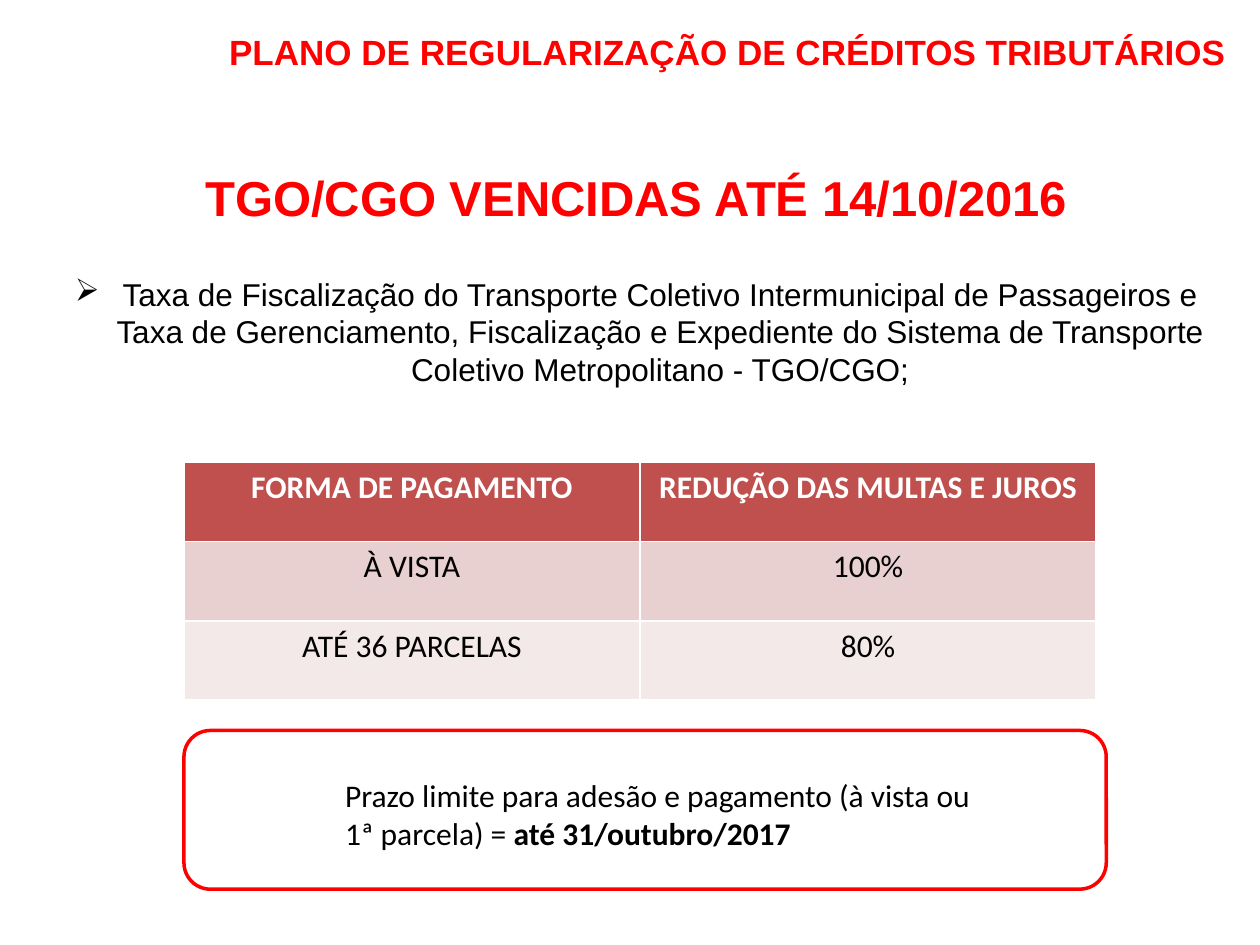
"""Build the slide on the tax credit regularisation plan for TGO/CGO fees."""
import pptx
import pptx.util
import pptx.dml.color
import pptx.enum.shapes
import pptx.enum.text
import pptx.oxml.ns
import lxml.etree

Pt = pptx.util.Pt
ALIGN = pptx.enum.text.PP_ALIGN
COLORS = {"red": "FF0000", "black": "000000", "white": "FFFFFF",
          "header": "C0504D", "cash": "E8D0D0", "instalments": "F4E9E9"}

deck = pptx.Presentation()
deck.slide_width = pptx.util.Inches(10)
deck.slide_height = pptx.util.Inches(7.5)
slide = deck.slides.add_slide(deck.slide_layouts[5])


def share(left, top, width, height):
    """Turn percentages of the slide into lengths."""
    return [int(deck.slide_width * left / 100), int(deck.slide_height * top / 100),
            int(deck.slide_width * width / 100), int(deck.slide_height * height / 100)]


def style(paragraph, font_name, size, color, bold=None, align=ALIGN.CENTER):
    """Set the alignment and font of a paragraph."""
    paragraph.alignment = align
    paragraph.font.name = font_name
    paragraph.font.size = Pt(size)
    paragraph.font.bold = bold
    paragraph.font.color.rgb = pptx.dml.color.RGBColor.from_string(COLORS[color])


plan = slide.shapes.title
plan.left, plan.top, plan.width, plan.height = share(8.3, 0.7, 90, 9.4)
plan.text_frame.text = "PLANO DE REGULARIZAÇÃO DE CRÉDITOS TRIBUTÁRIOS"
plan.text_frame.vertical_anchor = pptx.enum.text.MSO_ANCHOR.MIDDLE
style(plan.text_frame.paragraphs[0], "Arial", 20, "red", True, ALIGN.RIGHT)

fees = slide.shapes.add_textbox(*share(4.3, 16.4, 92.4, 74.5)).text_frame
fees.word_wrap = True
fees.margin_top = Pt(7.2)
overdue = fees.paragraphs[0]
overdue.text = "TGO/CGO VENCIDAS ATÉ 14/10/2016"
overdue.space_after = Pt(24)
style(overdue, "Arial", 28, "red", True)

fee_names = fees.add_paragraph()
fee_names.text = ("Taxa de Fiscalização do Transporte Coletivo Intermunicipal de Passageiros e "
                  "Taxa de Gerenciamento, Fiscalização e Expediente do Sistema de Transporte "
                  "Coletivo Metropolitano - TGO/CGO;")
fee_names.space_before = Pt(3.6)
fee_names.space_after = Pt(24)
indent = pptx.util.Inches(0.38)
properties = fee_names._p.get_or_add_pPr()
properties.set("marL", str(indent))
properties.set("indent", str(-indent))
bullet = lxml.etree.SubElement(properties, pptx.oxml.ns.qn("a:buChar"))
bullet.set("char", "➢")
style(fee_names, "Arial", 18, "black")

payments = [("header", "white", ("FORMA DE PAGAMENTO", "REDUÇÃO DAS MULTAS E JUROS")),
            ("cash", "black", ("À VISTA", "100%")),
            ("instalments", "black", ("ATÉ 36 PARCELAS", "80%"))]
reductions = slide.shapes.add_table(len(payments), 2, *share(14.6, 48.9, 72.4, 25.2)).table
for row, (fill, color, labels) in enumerate(payments):
    for column, label in enumerate(labels):
        cell = reductions.cell(row, column)
        cell.text = label
        cell.fill.solid()
        cell.fill.fore_color.rgb = pptx.dml.color.RGBColor.from_string(COLORS[fill])
        style(cell.text_frame.paragraphs[0], "Calibri", 18, color, row == 0)

frame = slide.shapes.add_shape(pptx.enum.shapes.MSO_SHAPE.ROUNDED_RECTANGLE,
                               *share(14.6, 77.3, 73.2, 16.8))
frame.shadow.inherit = False
frame.fill.background()
frame.line.color.rgb = pptx.dml.color.RGBColor.from_string(COLORS["red"])
frame.line.width = Pt(2)

deadline = slide.shapes.add_textbox(*share(26.4, 81.5, 52, 9.4)).text_frame
deadline.word_wrap = True
deadline.auto_size = pptx.enum.text.MSO_AUTO_SIZE.SHAPE_TO_FIT_TEXT
limit = deadline.paragraphs[0]
limit.add_run().text = "Prazo limite para adesão e pagamento (à vista ou 1ª parcela) = "
final_date = limit.add_run()
final_date.text = "até 31/outubro/2017"
final_date.font.bold = True
style(limit, "Calibri", 18, "black", align=ALIGN.LEFT)

deck.save("out.pptx")
